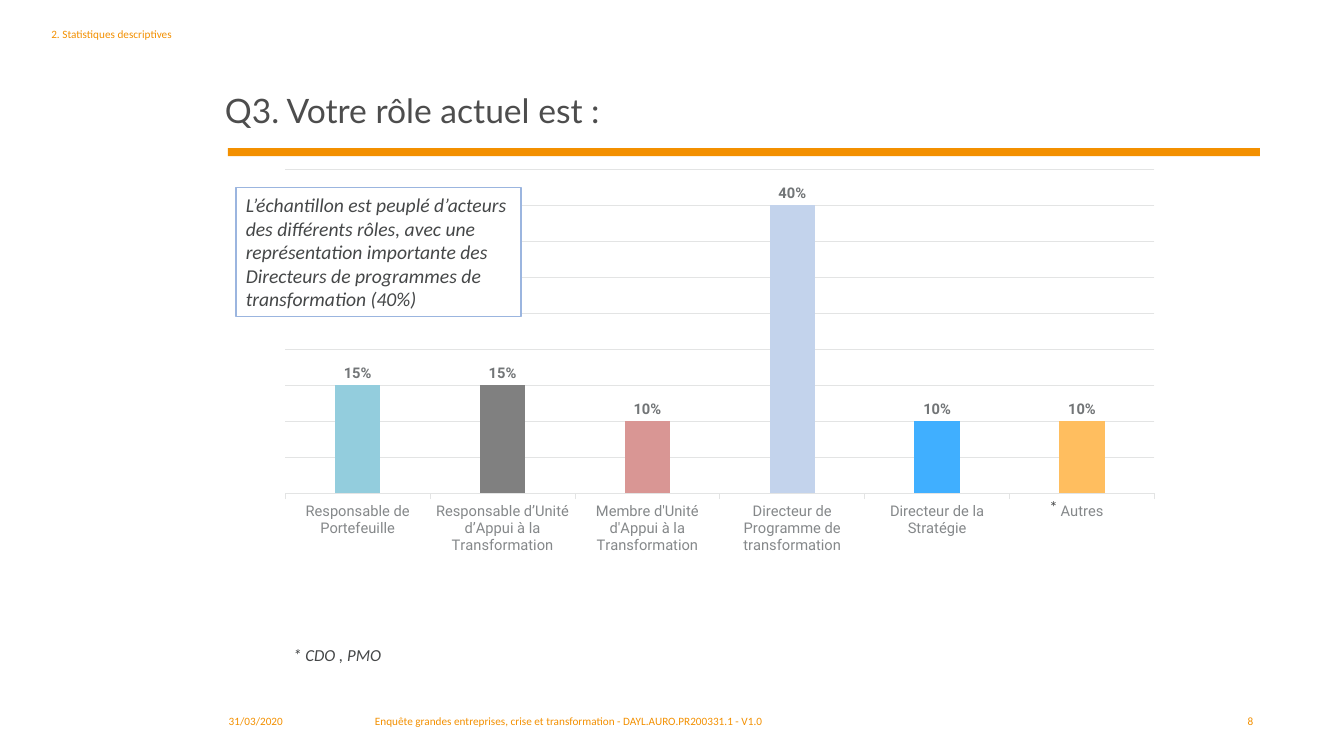
import dataclasses

import pptx
import pptx.chart.data
import pptx.dml.color
import pptx.enum.chart
import pptx.enum.shapes
import pptx.enum.text
import pptx.oxml
import pptx.util

WIDTH, HEIGHT = 13.33, 7.5
ORANGE, TEXT, GRID = "F39000", "454748", "E3E4E4"
ALIGN = pptx.enum.text.PP_ALIGN
ANCHOR = pptx.enum.text.MSO_ANCHOR


@dataclasses.dataclass(frozen=True)
class Area:
    """Percentages of the slide's width and height."""
    left: float
    top: float
    width: float
    height: float

    def box(self) -> tuple:
        shares = ((self.left, WIDTH), (self.top, HEIGHT),
                  (self.width, WIDTH), (self.height, HEIGHT))
        return tuple(pptx.util.Inches(part * full / 100) for part, full in shares)


@dataclasses.dataclass(frozen=True)
class Note:
    words: str
    area: Area
    size: float = 8
    color: str = ORANGE
    italic: bool = False
    align: ALIGN = ALIGN.LEFT


@dataclasses.dataclass(frozen=True)
class Role:
    label: str
    share: float
    color: str


FOOTER_TOP, FOOTER_HEIGHT = 93.87, 4.8
NOTES = [
    Note("31/03/2020", Area(16.28, FOOTER_TOP, 10.65, FOOTER_HEIGHT)),
    Note("Enquête grandes entreprises, crise et transformation - DAYL.AURO.PR200331.1 - V1.0",
         Area(27.16, FOOTER_TOP, 41.04, FOOTER_HEIGHT)),
    Note("8", Area(84.85, FOOTER_TOP, 9.15, FOOTER_HEIGHT), align=ALIGN.RIGHT),
    Note("2. Statistiques descriptives", Area(3.08, 2.93, 12.68, 18.27)),
    Note("* CDO , PMO", Area(21.08, 84.67, 49.14, 4), 12, TEXT, True),
    Note("*", Area(77.34, 65.07, 2.33, 4.13), 12, TEXT),
]
CALLOUT = Note(
    "L’échantillon est peuplé d’acteurs des différents rôles, avec une représentation "
    "importante des Directeurs de programmes de transformation (40%)",
    Area(17.55, 24.8, 21.23, 17.07), 14, TEXT, True)
ROLES = [
    Role("Responsable de Portefeuille", 0.15, "93CDDD"),
    Role("Responsable d’Unité d’Appui à la Transformation", 0.15, "808080"),
    Role("Membre d'Unité d'Appui à la Transformation", 0.1, "D99694"),
    Role("Directeur de Programme de transformation", 0.4, "C3D3EC"),
    Role("Directeur de la Stratégie", 0.1, "40AFFF"),
    Role("Autres", 0.1, "FFBE5F"),
]


def rgb(value: str) -> pptx.dml.color.RGBColor:
    return pptx.dml.color.RGBColor.from_string(value)


def style_font(font, name: str, size: float, color: str,
               italic: bool = False, bold: bool = False) -> None:
    font.name, font.size = name, pptx.util.Pt(size)
    font.italic, font.bold = italic, bold
    font.color.rgb = rgb(color)


def style_line(line, color: str, width: float) -> None:
    line.color.rgb = rgb(color)
    line.width = pptx.util.Pt(width)


def write(frame, note: Note) -> None:
    frame.word_wrap = True
    paragraph = frame.paragraphs[0]
    paragraph.text = note.words
    paragraph.alignment = note.align
    style_font(paragraph.font, "Calibri", note.size, note.color, note.italic)


def add_note(slide, note: Note) -> None:
    write(slide.shapes.add_textbox(*note.area.box()).text_frame, note)


def add_panel(slide, area: Area, fill: str):
    panel = slide.shapes.add_shape(
        pptx.enum.shapes.MSO_SHAPE.RECTANGLE, *area.box())
    panel.shadow.inherit = False
    panel.fill.solid()
    panel.fill.fore_color.rgb = rgb(fill)
    panel.line.fill.background()
    return panel


def add_title(slide, words: str, area: Area) -> None:
    title = slide.shapes.title
    title.left, title.top, title.width, title.height = area.box()
    frame = title.text_frame
    frame.auto_size = pptx.enum.text.MSO_AUTO_SIZE.NONE
    frame.vertical_anchor = ANCHOR.BOTTOM
    heading = frame.paragraphs[0]
    heading.text = words
    heading.alignment = ALIGN.LEFT
    heading.line_spacing = 0.9
    style_font(heading.font, "Lato", 24, "4D4D4D")


def place_plot(chart, x: float, y: float, w: float, h: float) -> None:
    plot_area = chart.plots[0]._element.getparent()
    for layout in plot_area.findall(pptx.oxml.ns.qn("c:layout")):
        plot_area.remove(layout)
    spots = "".join(f'<c:{key} val="{value}"/>' for key, value in (
        ("layoutTarget", "inner"), ("xMode", "edge"), ("yMode", "edge"),
        ("x", x), ("y", y), ("w", w), ("h", h)))
    plot_area.insert(0, pptx.oxml.parse_xml(
        f'<c:layout {pptx.oxml.ns.nsdecls("c")}>'
        f'<c:manualLayout>{spots}</c:manualLayout></c:layout>'))


def add_role_chart(slide, area: Area, roles: list[Role]) -> None:
    data = pptx.chart.data.CategoryChartData(number_format="0%")
    data.categories = [role.label for role in roles]
    data.add_series("Series 1", [role.share for role in roles])
    kinds = pptx.enum.chart
    chart = slide.shapes.add_chart(
        kinds.XL_CHART_TYPE.COLUMN_CLUSTERED, *area.box(), data).chart
    chart.has_legend = chart.has_title = False
    style_font(chart.font, "Roboto", 10, TEXT)
    place_plot(chart, 0.02, 0.02, 0.96, 0.81)

    names = chart.category_axis
    names.major_tick_mark = kinds.XL_TICK_MARK.OUTSIDE
    style_font(names.tick_labels.font, "Roboto", 10.5, "85888A")
    style_line(names.format.line, GRID, 0.75)

    shares = chart.value_axis
    shares.visible = False
    shares.minimum_scale, shares.maximum_scale, shares.major_unit = 0, 0.45, 0.05
    shares.has_major_gridlines = True
    style_line(shares.major_gridlines.format.line, GRID, 0.75)

    bars = chart.plots[0]
    bars.vary_by_categories = False
    bars.gap_width, bars.overlap = 219, -27
    series = bars.series[0]
    series.format.fill.solid()
    series.format.fill.fore_color.rgb = rgb(ORANGE)
    for index, role in enumerate(roles):
        fill = series.points[index].format.fill
        fill.solid()
        fill.fore_color.rgb = rgb(role.color)
    labels = series.data_labels
    labels.show_value = True
    labels.position = kinds.XL_LABEL_POSITION.OUTSIDE_END
    labels.number_format, labels.number_format_is_linked = "0%", False
    style_font(labels.font, "Roboto", 10.5, "727577", bold=True)


def main() -> None:
    deck = pptx.Presentation()
    deck.slide_width = pptx.util.Inches(WIDTH)
    deck.slide_height = pptx.util.Inches(HEIGHT)
    slide = deck.slides.add_slide(deck.slide_layouts.get_by_name("Title Only"))
    add_panel(slide, Area(16.95, 19.6, 76.8, 1.07), ORANGE)
    add_title(slide, "Q3. Votre rôle actuel est :", Area(15.98, 2.93, 77.8, 15.07))
    add_role_chart(slide, Area(19.88, 21.33, 67.37, 52.93), ROLES)
    for note in NOTES:
        add_note(slide, note)
    callout = add_panel(slide, CALLOUT.area, "FFFFFF")
    style_line(callout.line, "9BB5DF", 1)
    callout.text_frame.vertical_anchor = ANCHOR.MIDDLE
    write(callout.text_frame, CALLOUT)
    deck.save("out.pptx")


if __name__ == "__main__":
    main()
